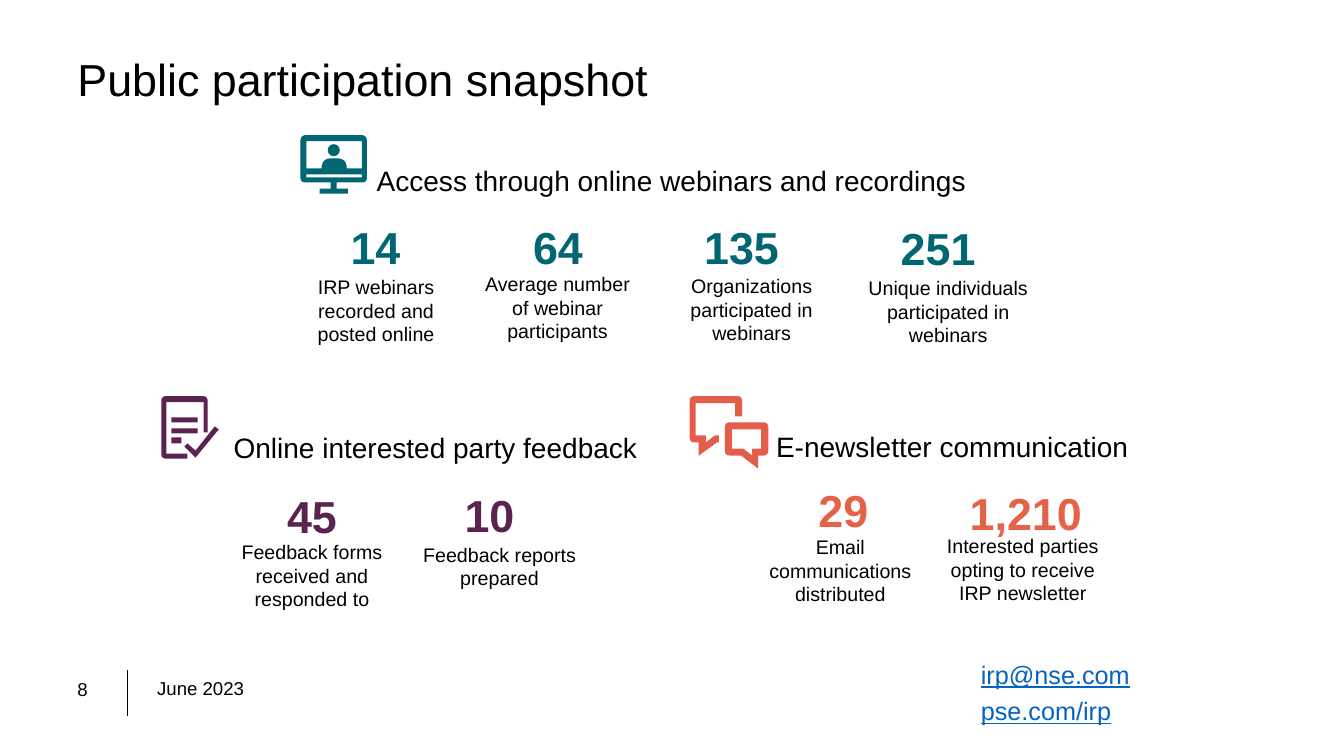
"""Build the public participation snapshot slide."""
from dataclasses import dataclass

from lxml import etree
from pptx import Presentation
from pptx.dml.color import RGBColor
from pptx.enum.shapes import MSO_CONNECTOR, MSO_SHAPE
from pptx.enum.text import MSO_ANCHOR, PP_ALIGN
from pptx.oxml.ns import qn
from pptx.util import Inches, Pt

BLACK = RGBColor(0x00, 0x00, 0x00)
TEAL = RGBColor(0x00, 0x66, 0x71)
PLUM = RGBColor(0x5B, 0x23, 0x4F)
CORAL = RGBColor(0xE4, 0x62, 0x48)
ICON_CORAL = RGBColor(0xE4, 0x5D, 0x48)
LINK_BLUE = RGBColor(0x05, 0x63, 0xC1)
LEFT, CENTER = PP_ALIGN.LEFT, PP_ALIGN.CENTER
TOP, MIDDLE, BOTTOM = MSO_ANCHOR.TOP, MSO_ANCHOR.MIDDLE, MSO_ANCHOR.BOTTOM
ROUNDED, OVAL, RECTANGLE = MSO_SHAPE.ROUNDED_RECTANGLE, MSO_SHAPE.OVAL, MSO_SHAPE.RECTANGLE
STRAIGHT = MSO_CONNECTOR.STRAIGHT

Box = tuple[float, float, float, float]
Corner = tuple[float, ...]
NUMBER_SIZE = (2.43, 1.64)
DEFAULT_INSETS = (0.1, 0.05, 0.1, 0.05)
NUMBER_INSETS = (0, 0.07, 0, 0)
NO_INSETS = (0, 0, 0, 0)


@dataclass(frozen=True)
class Label:
    text: str
    box: Box
    size: float
    color: RGBColor = BLACK
    align: PP_ALIGN = LEFT
    anchor: MSO_ANCHOR = TOP
    insets: Box = DEFAULT_INSETS
    bold: bool = False
    underline: bool = False
    line_spacing: float = 1.0


@dataclass(frozen=True)
class Statistic:
    number: str
    left: float
    top: float
    color: RGBColor
    caption: str
    caption_box: Box


@dataclass(frozen=True)
class IconOutline:
    color: RGBColor
    contours: tuple[tuple[Corner, ...], ...]


@dataclass(frozen=True)
class IconPart:
    kind: MSO_SHAPE
    box: Box
    color: RGBColor


LABELS = (
    Label("8", (0.67, 6.68, 0.56, 0.33), 13.3),
    Label("June 2023", (1.46, 6.69, 4.61, 0.33), 13.3, line_spacing=0.9),
    Label("Public participation snapshot", (0.67, 0.4, 12, 0.83), 32,
          anchor=MIDDLE, line_spacing=0.9),
    Label("Access through online webinars and recordings",
          (3.22, 1.57, 6.88, 0.58), 20, align=CENTER),
    Label("E-newsletter communication", (7.33, 4.21, 4.23, 0.58), 20, align=CENTER),
    Label("Online interested party feedback", (1.3, 4.22, 6.04, 0.58), 20, align=CENTER),
    Label("irp@nse.com", (9.63, 6.49, 1.89, 0.4), 18, LINK_BLUE, underline=True),
    Label("pse.com/irp", (9.63, 6.85, 1.65, 0.4), 18, LINK_BLUE, underline=True),
)

STATISTICS = (
    Statistic("14", 2.51, 2.09, TEAL, "IRP webinars recorded and posted online",
              (2.99, 2.43, 1.48, 1)),
    Statistic("64", 4.32, 2.09, TEAL, "Average number of webinar participants",
              (4.79, 2.4, 1.48, 1)),
    Statistic("135", 6.14, 2.09, TEAL, "Organizations participated in webinars",
              (6.62, 2.42, 1.67, 1)),
    Statistic("251", 8.09, 2.1, TEAL, "Unique individuals participated in webinars",
              (8.57, 2.44, 1.67, 1)),
    Statistic("45", 1.88, 4.76, PLUM, "Feedback forms received and responded to",
              (2.26, 5.06, 1.67, 1)),
    Statistic("10", 3.64, 4.75, PLUM, "Feedback reports prepared",
              (3.96, 5.32, 1.99, 0.53)),
    Statistic("29", 7.15, 4.7, CORAL, "Email communications distributed",
              (7.5, 5.01, 1.67, 1)),
    Statistic("1,210", 8.96, 4.73, CORAL,
              "Interested parties opting to receive IRP newsletter",
              (9.31, 5.18, 1.67, 0.82)),
)

MONITOR = IconOutline(TEAL, (
    ((2.98, 1.34, 0.06), (3.64, 1.34, 0.06), (3.64, 1.81, 0.05), (3.34, 1.81),
     (3.34, 1.87), (3.45, 1.87), (3.45, 1.92), (3.17, 1.92), (3.17, 1.87),
     (3.28, 1.87), (3.28, 1.81), (2.98, 1.81, 0.05)),
    ((3.04, 1.73), (3.59, 1.73), (3.59, 1.76), (3.04, 1.76)),
    ((3.04, 1.4), (3.59, 1.4), (3.59, 1.67), (3.44, 1.67), (3.44, 1.57, 0.1),
     (3.19, 1.57, 0.1), (3.19, 1.67), (3.04, 1.67)),
))
SMALL_BUBBLE = IconOutline(ICON_CORAL, (
    ((7.19, 4.19, 0.05), (7.62, 4.19, 0.05), (7.62, 4.52, 0.05), (7.52, 4.52),
     (7.52, 4.65), (7.35, 4.52), (7.19, 4.52, 0.05)),
    ((7.26, 4.26), (7.55, 4.26), (7.55, 4.45), (7.46, 4.45), (7.46, 4.52),
     (7.37, 4.45), (7.26, 4.45)),
))
LARGE_BUBBLE = IconOutline(ICON_CORAL, (
    ((6.84, 3.93, 0.05), (7.36, 3.93, 0.05), (7.36, 4.13), (7.29, 4.13), (7.29, 4),
     (6.9, 4), (6.9, 4.32), (7, 4.32), (7, 4.39), (7.09, 4.32), (7.13, 4.32),
     (7.13, 4.39), (7.11, 4.39), (6.93, 4.52), (6.93, 4.39), (6.84, 4.39, 0.05)),
))
FORM_PAGE = IconOutline(PLUM, (
    ((1.6, 3.93, 0.05), (2.06, 3.93, 0.05), (2.06, 4.29), (2.02, 4.29), (2.02, 3.99),
     (1.65, 3.99), (1.65, 4.5), (1.86, 4.5), (1.86, 4.55), (1.6, 4.55, 0.05)),
))
CHECK_MARK = IconOutline(PLUM, (
    ((1.83, 4.43), (1.86, 4.4), (1.94, 4.47), (2.13, 4.23), (2.17, 4.26), (1.94, 4.54)),
))
ICON_OUTLINES = (MONITOR, SMALL_BUBBLE, LARGE_BUBBLE, FORM_PAGE, CHECK_MARK)
ICON_PARTS = (
    IconPart(OVAL, (3.25, 1.43, 0.12, 0.12), TEAL),
    IconPart(RECTANGLE, (1.7, 4.14, 0.26, 0.05), PLUM),
    IconPart(RECTANGLE, (1.7, 4.25, 0.26, 0.05), PLUM),
    IconPart(RECTANGLE, (1.7, 4.34, 0.1, 0.06), PLUM),
)


def write_label(shape, label: Label) -> None:
    frame = shape.text_frame
    frame.text = label.text
    frame.word_wrap = True
    frame.vertical_anchor = label.anchor
    (frame.margin_left, frame.margin_top,
     frame.margin_right, frame.margin_bottom) = map(Inches, label.insets)
    paragraph = frame.paragraphs[0]
    paragraph.alignment = label.align
    paragraph.line_spacing = label.line_spacing
    font = paragraph.runs[0].font
    font.name, font.size = "Arial", Pt(label.size)
    font.bold, font.underline = label.bold, label.underline
    font.color.rgb = label.color


def draw_label(slide, label: Label) -> None:
    write_label(slide.shapes.add_textbox(*map(Inches, label.box)), label)


def draw_statistic(slide, statistic: Statistic) -> None:
    box = (statistic.left, statistic.top, *NUMBER_SIZE)
    panel = slide.shapes.add_shape(ROUNDED, *map(Inches, box))
    panel.adjustments[0] = 0.033
    panel.shadow.inherit = False
    panel.fill.background()
    panel.line.fill.background()
    write_label(panel, Label(statistic.number, box, 32, statistic.color, CENTER,
                             insets=NUMBER_INSETS, bold=True))
    draw_label(slide, Label(statistic.caption, statistic.caption_box, 14,
                            align=CENTER, anchor=BOTTOM, insets=NO_INSETS))


def paint(shape, color: RGBColor) -> None:
    shape.shadow.inherit = False
    shape.fill.solid()
    shape.fill.fore_color.rgb = color
    shape.line.fill.background()


def round_corners(corners: tuple[Corner, ...], steps: int = 6) -> list[tuple[int, int]]:
    points = []
    for index, (x, y, *radius) in enumerate(corners):
        if not radius:
            points.append((Inches(x), Inches(y)))
            continue
        ends = []
        for neighbor in (corners[index - 1], corners[(index + 1) % len(corners)]):
            dx, dy = neighbor[0] - x, neighbor[1] - y
            share = radius[0] / (dx * dx + dy * dy) ** 0.5
            ends.append((dx * share, dy * share))
        for step in range(steps + 1):
            t = step / steps
            points.append(tuple(Inches(origin + (1 - t) ** 2 * start + t * t * end)
                                for origin, start, end in zip((x, y), *ends)))
    return points


def draw_outline(slide, icon: IconOutline) -> None:
    contours = [round_corners(corners) for corners in icon.contours]
    builder = slide.shapes.build_freeform(*contours[0][0])
    builder.add_line_segments(contours[0][1:], close=True)
    for contour in contours[1:]:
        builder.move_to(*contour[0])
        builder.add_line_segments(contour[1:], close=True)
    paint(builder.convert_to_shape(), icon.color)


def draw_footer_divider(slide) -> None:
    divider = slide.shapes.add_connector(STRAIGHT, *map(Inches, (1.26, 6.65, 1.26, 7.1)))
    divider.line.color.rgb = BLACK
    divider.line.width = Pt(0.75)
    etree.SubElement(divider._element.spPr, qn("a:effectLst"))


def main() -> None:
    presentation = Presentation()
    presentation.slide_width, presentation.slide_height = Inches(13.33), Inches(7.5)
    slide = presentation.slides.add_slide(presentation.slide_layouts[6])
    draw_footer_divider(slide)
    for label in LABELS:
        draw_label(slide, label)
    for statistic in STATISTICS:
        draw_statistic(slide, statistic)
    for icon in ICON_OUTLINES:
        draw_outline(slide, icon)
    for part in ICON_PARTS:
        paint(slide.shapes.add_shape(part.kind, *map(Inches, part.box)), part.color)
    presentation.save("out.pptx")


if __name__ == "__main__":
    main()
